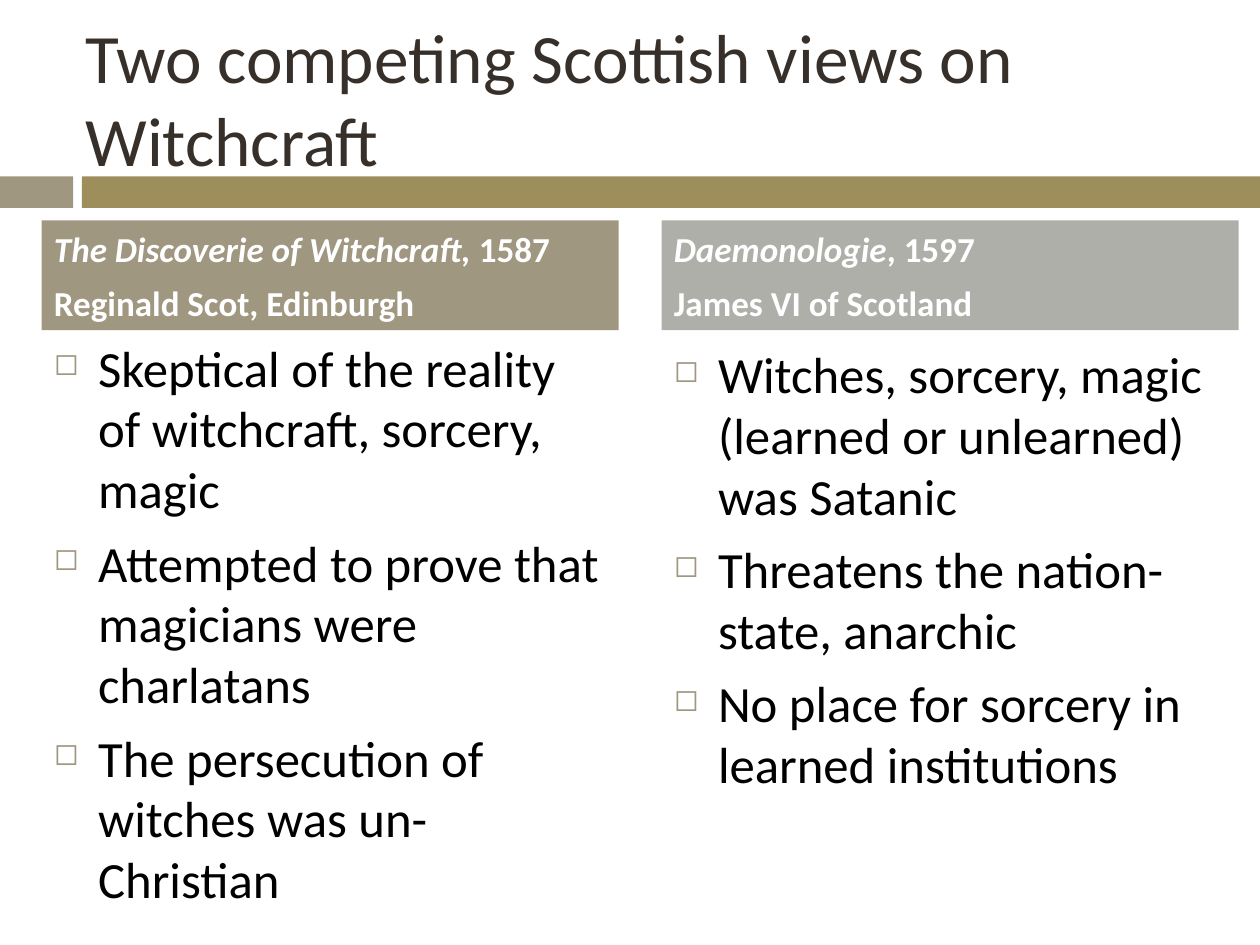
from lxml.etree import SubElement
from pptx import Presentation
from pptx.dml.color import RGBColor as Rgb
from pptx.enum.shapes import MSO_SHAPE as Preset
from pptx.enum.text import MSO_ANCHOR as Anchor, PP_ALIGN as Align
from pptx.oxml.ns import qn
from pptx.util import Inches, Pt

COLORS = {"taupe": "A09781", "olive": "9E8E5C", "gray": "AEAFA9",
          "title": "37302A", "body": "000000", "header": "FFFFFF"}
FORMATS = {
    "title": {"name": "Calibri", "size": Pt(39.6)},
    "body": {"name": "Calibri", "size": Pt(29)},
    "header": {"name": "Calibri", "size": Pt(20), "bold": True},
}
VIEWS = [
    {"left": 0.33, "fill": "taupe", "points_top": 2.62,
     "header": [[("The Discoverie of Witchcraft,", True), (" 1587", False)],
                [("Reginald Scot, Edinburgh", False)]],
     "points": ["Skeptical of the reality of witchcraft, sorcery, magic",
                "Attempted to prove that magicians were charlatans",
                "The persecution of witches was un-Christian"]},
    {"left": 5.25, "fill": "gray", "points_top": 2.67,
     "header": [[("Daemonologie", True), (", 1597", False)],
                [("James VI of Scotland", False)]],
     "points": ["Witches, sorcery, magic (learned or unlearned) was Satanic",
                "Threatens the nation-state, anarchic",
                "No place for sorcery in learned institutions"]},
]


def add_bar(slide, box, fill):
    """Place a plain filled rectangle in the box."""
    bar = slide.shapes.add_shape(Preset.RECTANGLE, *map(Inches, box))
    bar.shadow.inherit = False
    bar.fill.solid()
    bar.fill.fore_color.rgb = Rgb.from_string(COLORS[fill])
    bar.line.fill.background()
    return bar


def add_textbox(slide, box):
    """Place an empty text box in the box."""
    return slide.shapes.add_textbox(*map(Inches, box))


def write_lines(holder, lines, style, anchor, space=0):
    """Write lines of (text, italic) runs and return their paragraphs."""
    frame = holder.text_frame
    frame.word_wrap = True
    frame.vertical_anchor = anchor
    for index, line in enumerate(lines):
        paragraph = frame.paragraphs[0] if index == 0 else frame.add_paragraph()
        paragraph.alignment = Align.LEFT
        paragraph.space_before = Pt(space)
        for text, italic in line:
            run = paragraph.add_run()
            run.text = text
            run.font.italic = italic
            run.font.color.rgb = Rgb.from_string(COLORS[style])
            for attribute, value in FORMATS[style].items():
                setattr(run.font, attribute, value)
    return frame.paragraphs


def add_bullet(paragraph):
    """Give the paragraph a hanging square bullet."""
    properties = paragraph._p.get_or_add_pPr()
    properties.set("marL", str(Inches(0.35)))
    properties.set("indent", str(-Inches(0.35)))
    color = SubElement(properties, qn("a:buClr"))
    SubElement(color, qn("a:srgbClr"), val=COLORS["taupe"])
    SubElement(properties, qn("a:buSzPct"), val="60000")
    SubElement(properties, qn("a:buChar"), char="◻")


def add_title(slide, box):
    """Place the slide title in the box."""
    write_lines(add_textbox(slide, box),
                [[("Two competing Scottish views on Witchcraft", False)]],
                "title", Anchor.MIDDLE)


def add_band(slide, left, top, width, height):
    """Place the two-part band across the given box."""
    split, gap = 0.58, 0.07
    add_bar(slide, (left, top, split, height), "taupe")
    add_bar(slide, (left + split + gap, top, width - split - gap, height), "olive")


def add_view(slide, view, left, top, width, bottom):
    """Place one view's header and its bulleted points."""
    header = add_bar(slide, (left, top, width, 0.87), view["fill"])
    write_lines(header, view["header"], "header", Anchor.MIDDLE, 7)
    points_top = view["points_top"]
    points = add_textbox(slide, (left, points_top, width, bottom - points_top))
    lines = [[(point, False)] for point in view["points"]]
    for paragraph in write_lines(points, lines, "body", Anchor.TOP, 7):
        add_bullet(paragraph)


def main():
    """Build and save the slide."""
    deck = Presentation()
    deck.slide_width, deck.slide_height = Inches(10), Inches(7.5)
    slide = deck.slides.add_slide(deck.slide_layouts[6])
    add_band(slide, 0, 1.4, 10, 0.25)
    add_title(slide, (0.58, 0.3, 8.92, 0.95))
    for view in VIEWS:
        add_view(slide, view, view["left"], 1.75, 4.58, 6.59)
    deck.save("out.pptx")


if __name__ == "__main__":
    main()
